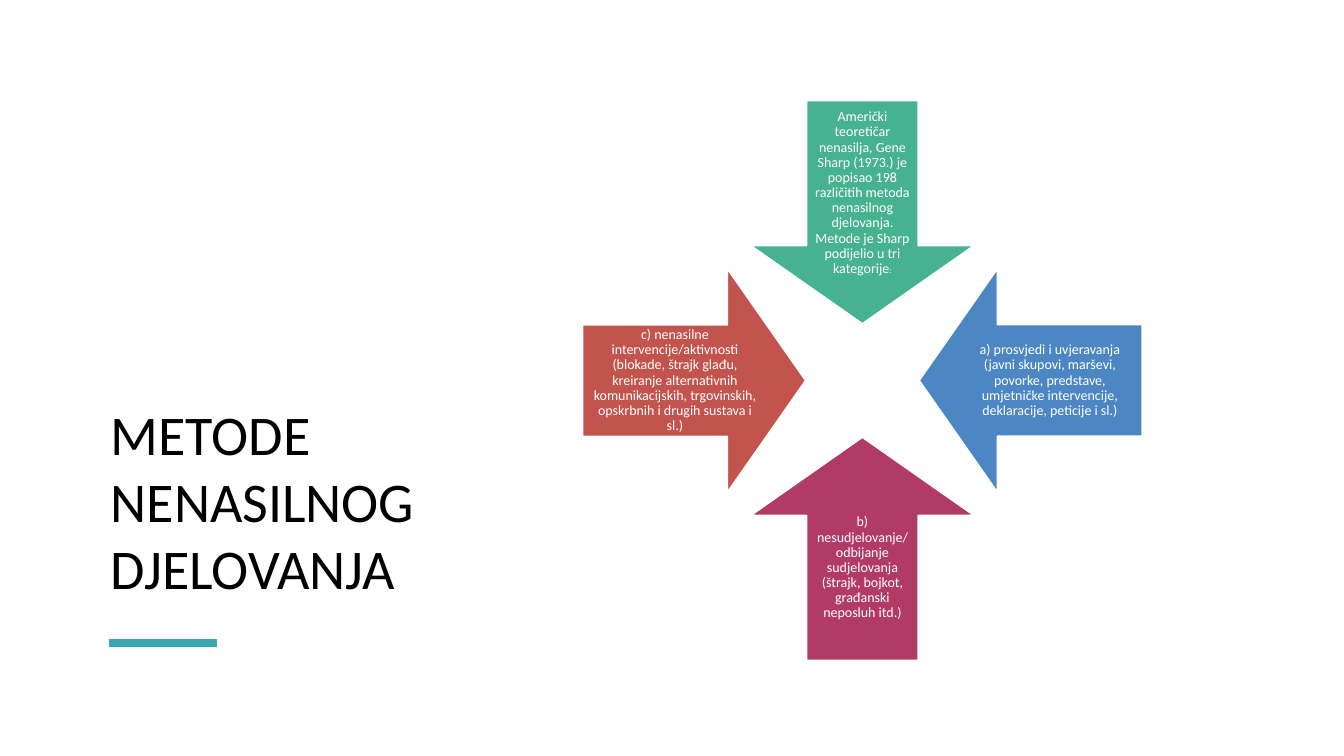
"""Builds a slide with four arrows converging on the methods of nonviolent action."""
from math import cos, radians, sin

from pptx import Presentation
from pptx.dml.color import RGBColor
from pptx.enum.shapes import MSO_CONNECTOR, MSO_SHAPE
from pptx.enum.text import MSO_ANCHOR, PP_ALIGN
from pptx.oxml.ns import qn
from pptx.util import Pt

DOWN_ARROW, STRAIGHT = MSO_SHAPE.DOWN_ARROW, MSO_CONNECTOR.STRAIGHT
MIDDLE, BOTTOM, CENTER = MSO_ANCHOR.MIDDLE, MSO_ANCHOR.BOTTOM, PP_ALIGN.CENTER
WHITE, BLACK = RGBColor(255, 255, 255), RGBColor(0, 0, 0)
TEAL = RGBColor(0x3B, 0xA7, 0xB1)
GREEN = RGBColor(0x46, 0xB2, 0x8F)
BLUE = RGBColor(0x4D, 0x87, 0xC3)
MAGENTA = RGBColor(0xB1, 0x3B, 0x65)
RED = RGBColor(0xC3, 0x53, 0x4D)
FONT = "Calibri"

TITLE = "METODE NENASILNOG DJELOVANJA"
ARROWS = [
    (0, GREEN, [("Američki teoretičar nenasilja, Gene Sharp (1973.) je popisao 198 "
                 "različitih metoda nenasilnog djelovanja. Metode je Sharp "
                 "podijelio u tri kategorije", 10), (":", 6)]),
    (90, BLUE, [("a) prosvjedi i uvjeravanja (javni skupovi, marševi, povorke, predstave, "
                 "umjetničke intervencije, deklaracije, peticije i sl.)", 10)]),
    (180, MAGENTA, [("b) nesudjelovanje/odbijanje sudjelovanja (štrajk, bojkot, "
                     "građanski neposluh itd.)", 10)]),
    (270, RED, [("c) nenasilne intervencije/aktivnosti (blokade, štrajk glađu, "
                 "kreiranje alternativnih komunikacijskih, trgovinskih, opskrbnih "
                 "i drugih sustava i sl.)", 10)]),
]
CENTER_X, CENTER_Y = 616, 271.8
ARROW_SIZE, ARROW_RADIUS = 159.2, 120.2
TEXT_LENGTH, TEXT_WIDTH, TEXT_INSET = 131.8, 79.8, 5.7
TEXT_RADIUS = ARROW_RADIUS + (ARROW_SIZE - TEXT_LENGTH) / 2


def place(angle, radius, w, h):
    """Return the box of size w by h centred at an angle clockwise from the top."""
    x = CENTER_X + radius * sin(radians(angle))
    y = CENTER_Y - radius * cos(radians(angle))
    return Pt(x - w / 2), Pt(y - h / 2), Pt(w), Pt(h)


def add_text(s, box, runs, color, anchor):
    """Add a wrapped text box and return its frame."""
    tf = s.shapes.add_textbox(*box).text_frame
    tf.word_wrap = True
    tf.vertical_anchor = anchor
    for text, size in runs:
        r = tf.paragraphs[0].add_run()
        r.text = text
        r.font.name, r.font.size, r.font.color.rgb = FONT, Pt(size), color
    return tf


def add_arrow(s, angle, color, runs):
    """Add an arrow pointing at the centre, with its upright text."""
    sp = s.shapes.add_shape(DOWN_ARROW, *place(angle, ARROW_RADIUS, ARROW_SIZE, ARROW_SIZE))
    sp.adjustments[0], sp.adjustments[1] = 0.5, 0.35
    sp.rotation = angle
    sp.shadow.inherit = False
    sp.fill.solid()
    sp.fill.fore_color.rgb = color
    sp.line.color.rgb, sp.line.width = WHITE, Pt(1)

    w, h = (TEXT_LENGTH, TEXT_WIDTH) if angle % 180 else (TEXT_WIDTH, TEXT_LENGTH)
    tf = add_text(s, place(angle, TEXT_RADIUS, w, h), runs, WHITE, MIDDLE)
    tf.margin_left = tf.margin_right = tf.margin_top = tf.margin_bottom = Pt(TEXT_INSET)
    p = tf.paragraphs[0]
    p.alignment, p.line_spacing = CENTER, 0.9


def main():
    """Build and save the slide."""
    prs = Presentation()
    prs.slide_width, prs.slide_height = Pt(960), Pt(540)
    s = prs.slides.add_slide(prs.slide_layouts[6])
    add_text(s, (Pt(72), Pt(72), Pt(279.4), Pt(360.7)), [(TITLE, 40)], BLACK, BOTTOM)
    rule = s.shapes.add_connector(STRAIGHT, Pt(77.8), Pt(459.4), Pt(154.8), Pt(459.4))
    rule.line.color.rgb, rule.line.width = TEAL, Pt(6)
    sp_pr = rule._element.spPr
    sp_pr.append(sp_pr.makeelement(qn("a:effectLst"), {}))
    for angle, color, runs in ARROWS:
        add_arrow(s, angle, color, runs)
    prs.save("out.pptx")


if __name__ == "__main__":
    main()
